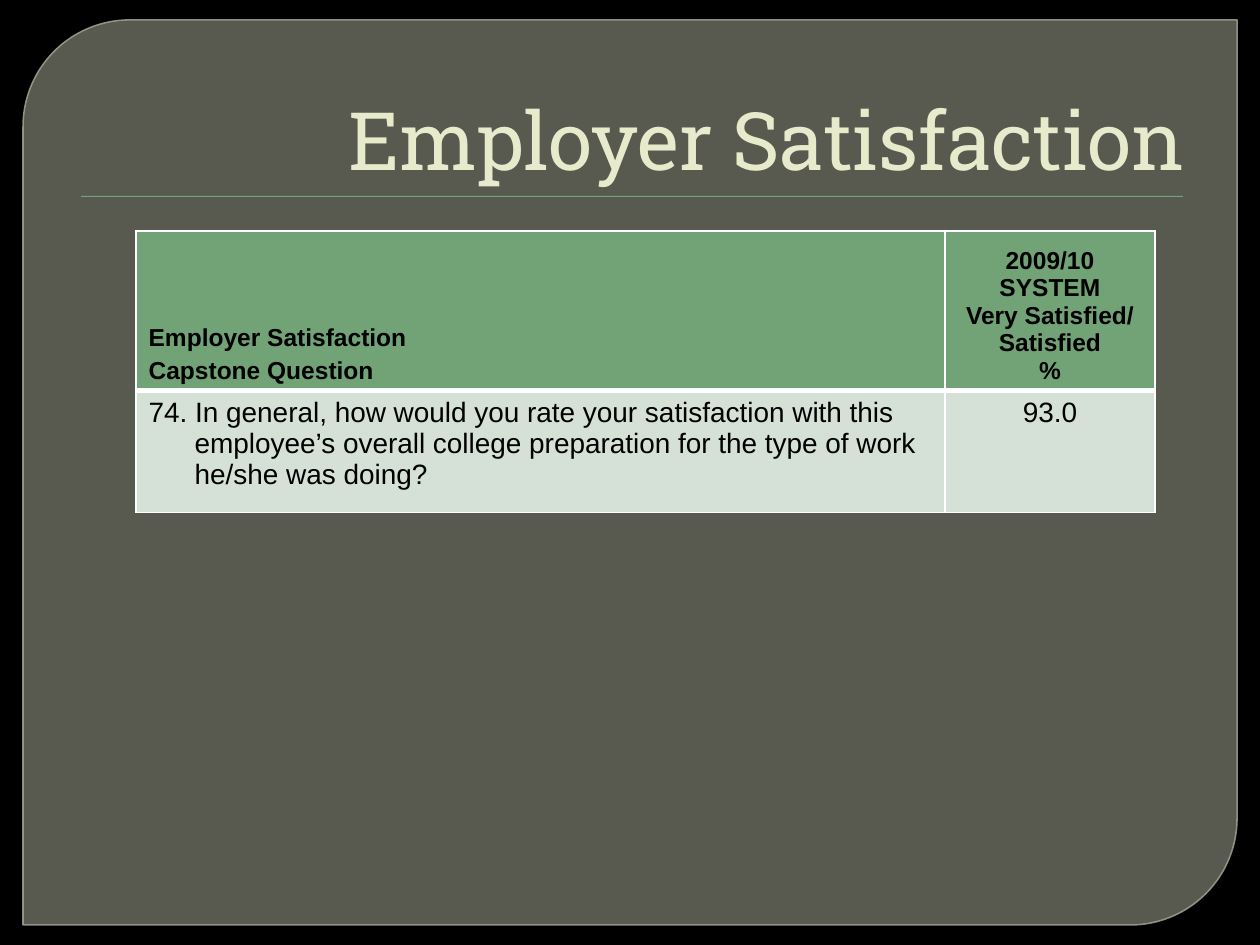
from dataclasses import dataclass
from lxml.etree import SubElement
from pptx import Presentation
from pptx.dml.color import RGBColor
from pptx.enum.shapes import MSO_SHAPE
from pptx.enum.text import MSO_ANCHOR, PP_ALIGN
from pptx.oxml.ns import qn
from pptx.util import Emu, Pt

HUES = {
    "back": "000000", "panel": "888B7B", "edge": "9DA090", "green": "72A376",
    "title": "E7EACB", "pale": "D5E0D6", "text": "000000", "grid": "FFFFFF",
}


@dataclass
class Entry:
    row: int
    col: int
    lines: list[str]
    size: int
    fill: str
    bold: bool = False
    align: PP_ALIGN = PP_ALIGN.LEFT
    anchor: MSO_ANCHOR = MSO_ANCHOR.TOP
    gap: float = 0      # points before each line
    inset: int = 0      # px indent of every line but the first


ENTRIES = [
    Entry(0, 0, ["Employer Satisfaction", "Capstone Question"], 14, "green",
          bold=True, anchor=MSO_ANCHOR.BOTTOM, gap=2.8),
    Entry(0, 1, ["2009/10", "SYSTEM", "Very Satisfied/", "Satisfied", "%"], 14,
          "green", bold=True, align=PP_ALIGN.CENTER, anchor=MSO_ANCHOR.BOTTOM),
    Entry(1, 0, ["74. In general, how would you rate your satisfaction with this",
                 "employee’s overall college preparation for the type of work",
                 "he/she was doing?"], 16, "pale", inset=46),
    Entry(1, 1, ["93.0"], 16, "pale", align=PP_ALIGN.CENTER),
]


def px(count: int) -> Emu:
    return Emu(round(count * 914400 / 126))


def hue(name: str) -> RGBColor:
    return RGBColor.from_string(HUES[name])


def fade(fill, share: int) -> None:
    """Set the opacity, in percent, of a solid fill."""
    color = fill._xPr.find(qn("a:solidFill"))[0]
    SubElement(color, qn("a:alpha"), val=str(share * 1000))


def block(slide, kind: MSO_SHAPE, box: tuple[int, int, int, int], fill: str):
    shape = slide.shapes.add_shape(kind, *map(px, box))
    shape.shadow.inherit = False
    shape.fill.solid()
    shape.fill.fore_color.rgb = hue(fill)
    shape.line.fill.background()
    return shape


def style(run, font: str, size: int, color: str, bold: bool = False) -> None:
    run.font.name = font
    run.font.size = Pt(size)
    run.font.bold = bold
    run.font.color.rgb = hue(color)


def rule(cell, side: str, width: int) -> None:
    line = SubElement(cell._tc.get_or_add_tcPr(), qn(f"a:ln{side}"), w=str(Pt(width)))
    fill = SubElement(line, qn("a:solidFill"))
    SubElement(fill, qn("a:srgbClr"), val=HUES["grid"])


def write(cell, entry: Entry) -> None:
    # The line between header and body is the thick one
    thick = "B" if entry.row == 0 else "T"
    for side in "LRTB":
        rule(cell, side, 3 if side == thick else 1)
    cell.fill.solid()
    cell.fill.fore_color.rgb = hue(entry.fill)
    cell.vertical_anchor = entry.anchor
    cell.text_frame.text = "\n".join(entry.lines)
    for spot, para in enumerate(cell.text_frame.paragraphs):
        para.alignment = entry.align
        para.space_before = Pt(entry.gap)
        if spot and entry.inset:
            para._p.get_or_add_pPr().set("marL", str(px(entry.inset)))
        style(para.runs[0], "Arial", entry.size, "text", entry.bold)


def main() -> None:
    deck = Presentation()
    deck.slide_width, deck.slide_height = px(1260), px(945)
    slide = deck.slides.add_slide(deck.slide_layouts[6])
    slide.background.fill.solid()
    slide.background.fill.fore_color.rgb = hue("back")

    # Panel and title rule
    panel = block(slide, MSO_SHAPE.ROUND_2_DIAG_RECTANGLE, (23, 20, 1214, 905), "panel")
    panel.adjustments[0] = 0.118
    panel.adjustments[1] = 0
    fade(panel.fill, 65)
    panel.line.color.rgb = hue("edge")
    panel.line.width = Pt(0.87)
    fade(panel.line.fill, 88)
    block(slide, MSO_SHAPE.RECTANGLE, (81, 196, 1102, 1), "green")

    # Title
    frame = slide.shapes.add_textbox(px(63), px(35), px(1134), px(158)).text_frame
    frame.word_wrap = True
    frame.vertical_anchor = MSO_ANCHOR.BOTTOM
    frame.text = "Employer Satisfaction"
    frame.paragraphs[0].alignment = PP_ALIGN.RIGHT
    style(frame.paragraphs[0].runs[0], "Roboto Slab", 46, "title")

    # Table
    wides, talls = (809, 210), (150, 122)
    table = slide.shapes.add_table(
        len(talls), len(wides), px(136), px(231), px(sum(wides)), px(sum(talls))).table
    table.first_row = table.horz_banding = False
    for col, wide in zip(table.columns, wides):
        col.width = px(wide)
    for row, tall in zip(table.rows, talls):
        row.height = px(tall)
    for entry in ENTRIES:
        write(table.cell(entry.row, entry.col), entry)

    deck.save("out.pptx")


if __name__ == "__main__":
    main()
